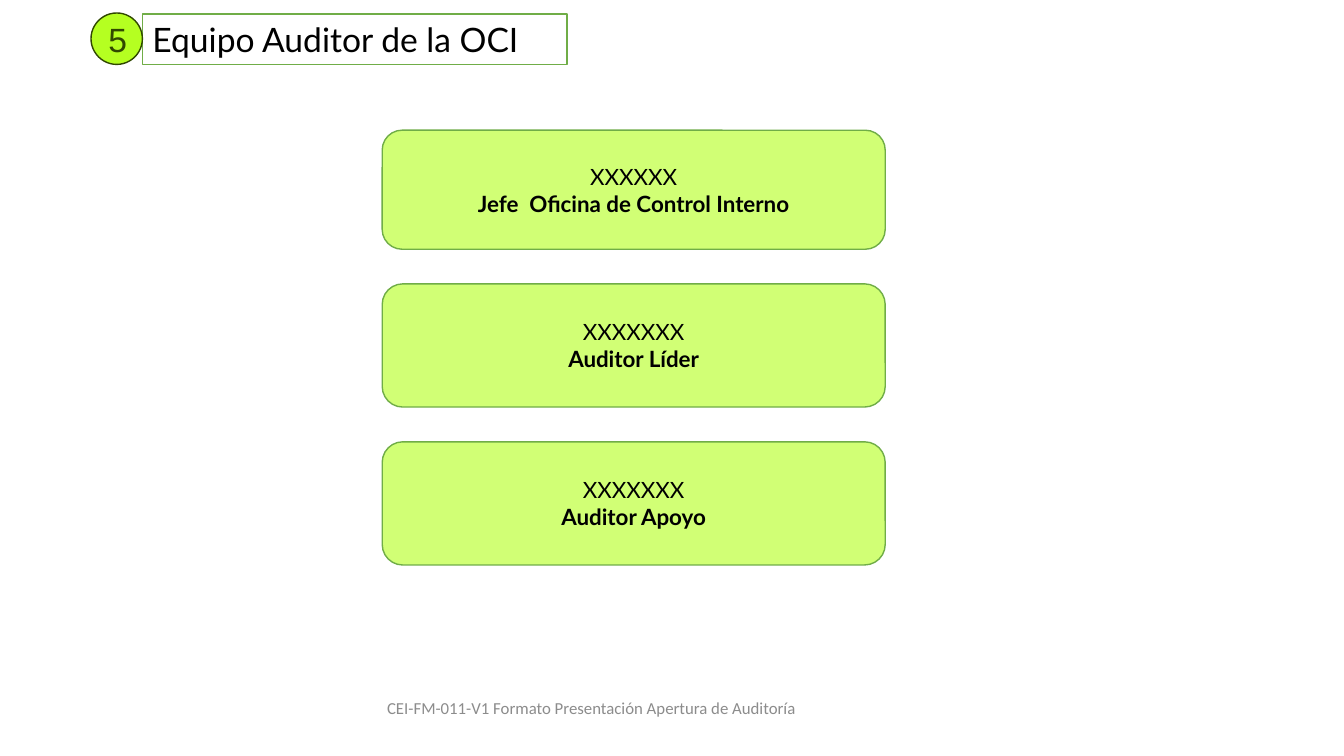
import pptx
import pptx.dml.color
import pptx.enum.shapes
import pptx.enum.text
import pptx.oxml
import pptx.oxml.ns
import pptx.util

Pt = pptx.util.Pt
RGBColor = pptx.dml.color.RGBColor
Shapes = pptx.enum.shapes.MSO_SHAPE
Align = pptx.enum.text.PP_ALIGN
Anchor = pptx.enum.text.MSO_ANCHOR

BLACK = RGBColor(0x00, 0x00, 0x00)
WHITE = RGBColor(0xFF, 0xFF, 0xFF)
GREEN = RGBColor(0x70, 0xAD, 0x47)
DARK_GREEN = RGBColor(0x30, 0x48, 0x00)
LIME = RGBColor(0xB5, 0xFF, 0x21)
PALE_LIME = RGBColor(0xD1, 0xFF, 0x75)
GRAY = RGBColor(0x8C, 0x8C, 0x8C)

TITLE_FORMAT = {"name": "Lato", "size": Pt(24), "bold": False, "color": BLACK}
NUMBER_FORMAT = {"name": "Arial", "size": Pt(24), "bold": False, "color": DARK_GREEN}
NAME_FORMAT = {"name": "Lato", "size": Pt(16), "bold": False, "color": BLACK}
ROLE_FORMAT = {**NAME_FORMAT, "bold": True}
FOOTER_FORMAT = {"name": "Calibri", "size": Pt(12), "bold": False, "color": GRAY}

CARD_GAP = 24.8
TEAM = [
    ("XXXXXX", "Jefe  Oficina de Control Interno", 85),
    ("XXXXXXX", "Auditor Líder", 88),
    ("XXXXXXX", "Auditor Apoyo", 88),
]


def style_outline(shape, fill, line):
    shape.fill.solid()
    shape.fill.fore_color.rgb = fill
    shape.line.color.rgb = line
    shape.line.width = Pt(1)


def write_lines(shape, lines, alignment=Align.CENTER, anchor=Anchor.MIDDLE):
    """Write each (text, format) pair as one paragraph."""
    frame = shape.text_frame
    frame.word_wrap = True
    frame.auto_size = pptx.enum.text.MSO_AUTO_SIZE.NONE
    frame.vertical_anchor = anchor
    for index, (text, text_format) in enumerate(lines):
        paragraph = frame.add_paragraph() if index else frame.paragraphs[0]
        paragraph.alignment = alignment
        font = paragraph.add_run().font
        paragraph.runs[0].text = text
        for attribute, value in text_format.items():
            if attribute == "color":
                font.color.rgb = value
            else:
                setattr(font, attribute, value)


def add_filled_shape(slide, kind, box, fill, line):
    shape = slide.shapes.add_shape(kind, *map(Pt, box))
    shape.shadow.inherit = False
    style_outline(shape, fill, line)
    return shape


def add_heading(slide, left, top, width, height, number, text):
    """Place a numbered circle and, touching it, the title in a rounded frame."""
    diameter = height + 0.7
    title = slide.shapes.title
    title.left, title.top = Pt(left + diameter), Pt(top + 0.7)
    title.width, title.height = Pt(width - diameter), Pt(height)
    geometry = pptx.oxml.parse_xml(
        f'<a:prstGeom {pptx.oxml.ns.nsdecls("a")} prst="roundRect"><a:avLst/></a:prstGeom>')
    title.element.spPr.append(geometry)
    style_outline(title, WHITE, GREEN)
    write_lines(title, [(text, TITLE_FORMAT)], Align.LEFT, Anchor.BOTTOM)
    title.text_frame.paragraphs[0].line_spacing = Pt(25)

    circle = add_filled_shape(slide, Shapes.OVAL, (left, top, diameter, diameter),
                              LIME, DARK_GREEN)
    write_lines(circle, [(number, NUMBER_FORMAT)])


def add_team(slide, left, top, width):
    for name, role, height in TEAM:
        card = add_filled_shape(slide, Shapes.ROUNDED_RECTANGLE,
                                (left, top, width, height), PALE_LIME, GREEN)
        write_lines(card, [(name, NAME_FORMAT), (role, ROLE_FORMAT)])
        top += height + CARD_GAP


def add_footer(slide, left, top, width, height, text):
    footer = slide.shapes.add_textbox(*map(Pt, (left, top, width, height)))
    write_lines(footer, [(text, FOOTER_FORMAT)])


def main():
    presentation = pptx.Presentation()
    presentation.slide_width, presentation.slide_height = Pt(960), Pt(540)
    slide = presentation.slides.add_slide(presentation.slide_layouts[5])
    add_heading(slide, 65, 9.3, 340, 36, "5", "Equipo Auditor de la OCI")
    add_team(slide, 273, 93, 359.3)
    add_footer(slide, 260.6, 491, 324, 29,
               "CEI-FM-011-V1 Formato Presentación Apertura de Auditoría")
    presentation.save("out.pptx")


if __name__ == "__main__":
    main()
